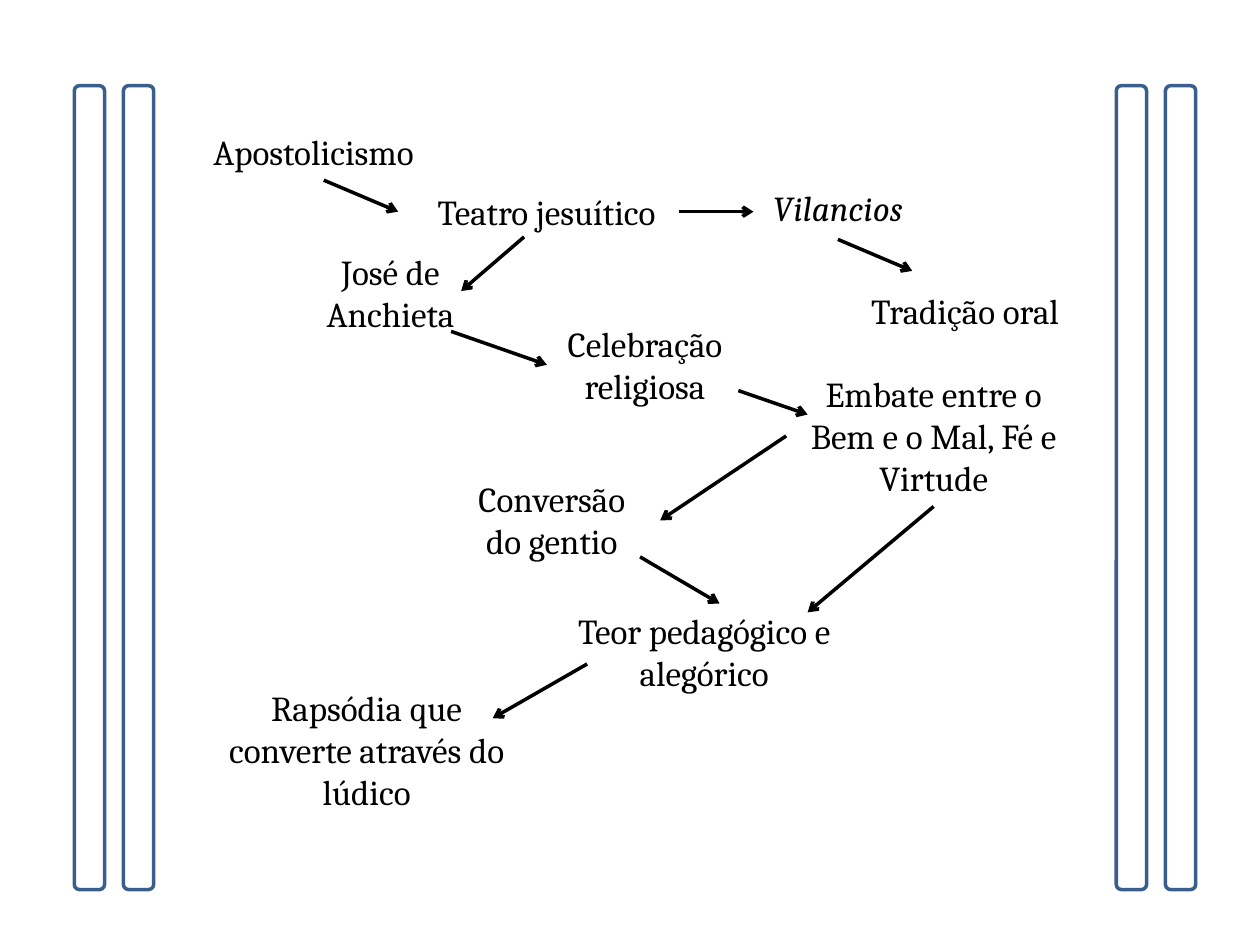
from dataclasses import dataclass

from lxml import etree
from pptx import Presentation
from pptx.dml.color import RGBColor
from pptx.enum import shapes, text
from pptx.oxml import ns
from pptx.util import Inches, Pt


@dataclass(frozen=True)
class Theme:
    """Colours, font and sizes of the slide."""
    font: str = "Cambria"
    size: Pt = Pt(20)
    ink: RGBColor = RGBColor(0, 0, 0)
    paper: RGBColor = RGBColor(255, 255, 255)
    rim: RGBColor = RGBColor(0x3A, 0x5F, 0x8C)
    line: Pt = Pt(2)


THEME = Theme()
LEFT, BOTTOM = 1, 2

IDEAS = {
    "apostle": ("Apostolicismo", 1.46, 0.99, 2.06, 0.44),
    "theatre": ("Teatro jesuítico", 3.16, 1.46, 2.36, 0.44),
    "carols": ("Vilancios", 5.47, 1.43, 2.36, 0.44),
    "oral": ("Tradição oral", 6.48, 2.25, 2.36, 0.44),
    "author": ("José de Anchieta", 2.32, 1.94, 1.56, 0.77),
    "feast": ("Celebração religiosa", 4.34, 2.51, 1.56, 0.77),
    "clash": ("Embate entre o Bem e o Mal, Fé e Virtude", 6.2, 2.91, 2.42, 1.11),
    "convert": ("Conversão do gentio", 3.6, 3.74, 1.56, 0.77),
    "teaching": ("Teor pedagógico e alegórico", 4.37, 4.79, 2.44, 0.77),
    "rhapsody": ("Rapsódia que converte através do lúdico", 1.69, 5.4, 2.44, 1.11),
}
ITALIC = {"carols"}

ARROWS = [
    ((2.57, 1.43), (3.16, 1.68), None, ("theatre", LEFT)),
    ((5.39, 1.68), (5.98, 1.68), None, None),
    ((6.65, 1.9), (7.24, 2.15), None, None),
    ((4.16, 1.88), (3.66, 2.31), None, None),
    ((3.58, 2.63), (4.34, 2.9), None, ("feast", LEFT)),
    ((5.86, 3.1), (6.41, 3.29), None, None),
    ((6.24, 3.46), (5.24, 4.13), None, None),
    ((7.41, 4.02), (6.41, 4.86), ("clash", BOTTOM), None),
    ((5.08, 4.42), (5.71, 4.79), None, None),
    ((4.66, 5.27), (3.91, 5.7), None, None),
]


def add_idea(slide, words, box, italic):
    """Write one idea, centred in its box."""
    label = slide.shapes.add_textbox(*map(Inches, box))
    frame = label.text_frame
    frame.word_wrap = True
    frame.auto_size = text.MSO_AUTO_SIZE.SHAPE_TO_FIT_TEXT
    para = frame.paragraphs[0]
    para.text = words
    para.alignment = text.PP_ALIGN.CENTER
    font = para.font
    font.name, font.size, font.italic = THEME.font, THEME.size, italic
    font.color.rgb = THEME.ink
    return label


def add_arrow(slide, start, end):
    """Draw one open-headed arrow."""
    arrow = slide.shapes.add_connector(
        shapes.MSO_CONNECTOR.STRAIGHT, *map(Inches, (*start, *end)))
    arrow.line.color.rgb = THEME.ink
    arrow.line.width = THEME.line
    etree.SubElement(arrow.line._get_or_add_ln(), ns.qn("a:tailEnd"), type="arrow")
    etree.SubElement(arrow._element.spPr, ns.qn("a:effectLst"))
    return arrow


def add_map(slide, left, top):
    """Place the ideas and their arrows from the given corner."""
    labels = {}
    for key, (words, x, y, wide, high) in IDEAS.items():
        box = (left + x, top + y, wide, high)
        labels[key] = add_idea(slide, words, box, key in ITALIC)
    for start, end, source, target in ARROWS:
        arrow = add_arrow(slide, (left + start[0], top + start[1]),
                          (left + end[0], top + end[1]))
        if source:
            arrow.begin_connect(labels[source[0]], source[1])
        if target:
            arrow.end_connect(labels[target[0]], target[1])


def add_bars(slide, left, top, wide, high, bar=0.24):
    """Stand a bar at each side of the given box."""
    for x in (left, left + wide - bar):
        post = slide.shapes.add_shape(
            shapes.MSO_SHAPE.ROUNDED_RECTANGLE,
            *map(Inches, (x, top, bar, high)))
        post.shadow.inherit = False
        post.fill.solid()
        post.fill.fore_color.rgb = THEME.paper
        post.line.color.rgb = THEME.rim
        post.line.width = THEME.line


def main():
    """Build and save the slide."""
    deck = Presentation()
    deck.slide_width, deck.slide_height = Inches(10), Inches(7.5)
    slide = deck.slides.add_slide(deck.slide_layouts[6])
    add_map(slide, 0, 0)
    for left in (8.86, 0.59):
        add_bars(slide, left, 0.68, 0.63, 6.38)
    deck.save("out.pptx")


if __name__ == "__main__":
    main()
